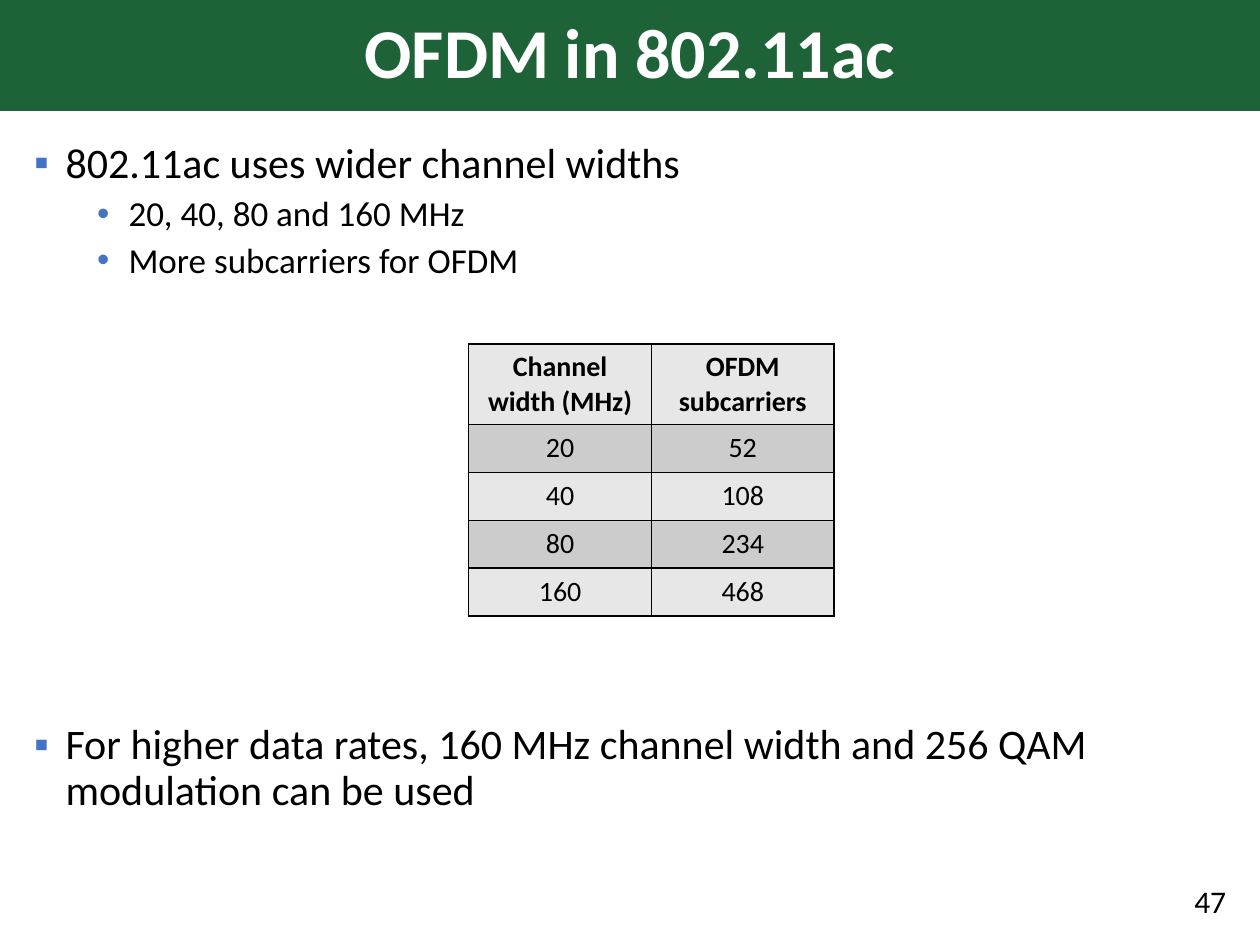
"""Build the slide on OFDM in 802.11ac."""
import lxml.etree
import pptx
import pptx.dml.color
import pptx.enum.text
import pptx.oxml.ns
import pptx.util

Inches = pptx.util.Inches
Pt = pptx.util.Pt
Color = pptx.dml.color.RGBColor
Align = pptx.enum.text.PP_ALIGN
Anchor = pptx.enum.text.MSO_ANCHOR
qn = pptx.oxml.ns.qn

GREEN = Color(0x1E, 0x62, 0x38)
BLUE = Color(0x44, 0x72, 0xC4)
BLACK = Color(0, 0, 0)
WHITE = Color(255, 255, 255)
LIGHT = Color(0xE7, 0xE7, 0xE7)
DARK = Color(0xCC, 0xCC, 0xCC)

BULLETS = [
    ("802.11ac uses wider channel widths", 0, 0),
    ("20, 40, 80 and 160 MHz", 1, 5),
    ("More subcarriers for OFDM", 1, 5),
    ("For higher data rates, 160 MHz channel width and 256 QAM "
     "modulation can be used", 0, 253),
]
LEVELS = [("▪", 0.25, 24), ("•", 0.75, 20)]
SUBCARRIERS = [
    ("Channel width (MHz)", "OFDM subcarriers"),
    ("20", "52"),
    ("40", "108"),
    ("80", "234"),
    ("160", "468"),
]


class SlideBuilder:
    """Hold the text style and the current slide."""

    def __init__(self, deck):
        """Add a title and content page to the deck."""
        self.page = deck.slides.add_slide(deck.slide_layouts[1])
        self.style = {"name": "Calibri", "bold": False}

    def apply(self, target, values):
        """Set each attribute named in the format values."""
        for name, value in values.items():
            setattr(target, name, value)

    def place(self, shape, left, top, width, height):
        """Move and size a shape, in inches."""
        edges = {"left": left, "top": top, "width": width, "height": height}
        self.apply(shape, {name: Inches(edge) for name, edge in edges.items()})

    def add_span(self, para, text, size, color=BLACK, **values):
        """Add one styled span to a paragraph."""
        span = para.add_run()
        span.text = text
        self.apply(span.font, {**self.style, "size": Pt(size), **values})
        span.font.color.rgb = color

    def title(self, text):
        """Fill the title band."""
        box = self.page.shapes.title
        self.place(box, 0, 0, 10, 0.88)
        box.fill.solid()
        box.fill.fore_color.rgb = GREEN
        self.apply(box.text_frame, {
            "vertical_anchor": Anchor.MIDDLE,
            "auto_size": pptx.enum.text.MSO_AUTO_SIZE.NONE})
        para = box.text_frame.paragraphs[0]
        self.apply(para, {"alignment": Align.CENTER, "line_spacing": 0.9})
        self.add_span(para, text, 40, WHITE, bold=True)

    def bullet(self, para, mark, indent):
        """Give a paragraph a coloured bullet and a hanging indent."""
        properties = para._p.get_or_add_pPr()
        properties.set("marL", str(Inches(indent)))
        properties.set("indent", str(Inches(-0.25)))
        color = lxml.etree.SubElement(properties, qn("a:buClr"))
        lxml.etree.SubElement(color, qn("a:srgbClr"), val=str(BLUE))
        lxml.etree.SubElement(properties, qn("a:buFont"), typeface="Arial")
        lxml.etree.SubElement(properties, qn("a:buChar"), char=mark)

    def body(self, items):
        """Fill the bulleted list."""
        box = self.page.placeholders[1]
        self.place(box, 0.17, 1.08, 9.65, 6.27)
        frame = box.text_frame
        frame.auto_size = pptx.enum.text.MSO_AUTO_SIZE.NONE
        for index, (text, level, space) in enumerate(items):
            para = frame.add_paragraph() if index else frame.paragraphs[0]
            mark, indent, size = LEVELS[level]
            self.bullet(para, mark, indent)
            self.apply(para, {"level": level, "line_spacing": 0.9,
                              "space_before": Pt(space)})
            self.add_span(para, text, size)

    def number(self, text):
        """Add the page number."""
        box = self.page.shapes.add_textbox(
            Inches(7.58), Inches(6.95), Inches(2.25), Inches(0.4))
        self.apply(box.text_frame, {"word_wrap": True,
                                    "vertical_anchor": Anchor.MIDDLE})
        para = box.text_frame.paragraphs[0]
        para.alignment = Align.RIGHT
        self.add_span(para, text, 18)

    def border(self, cell):
        """Draw a thin black line on all four sides of a cell."""
        properties = cell._tc.get_or_add_tcPr()
        for index, side in enumerate(("a:lnL", "a:lnR", "a:lnT", "a:lnB")):
            line = lxml.etree.Element(qn(side), w=str(Pt(1)))
            fill = lxml.etree.SubElement(line, qn("a:solidFill"))
            lxml.etree.SubElement(fill, qn("a:srgbClr"), val=str(BLACK))
            properties.insert(index, line)

    def table(self, rows):
        """Add the table with a bold header and alternating fills."""
        grid = self.page.shapes.add_table(
            len(rows), len(rows[0]), Inches(3.72), Inches(2.73),
            Inches(2.9), Inches(2.16)).table
        for column in grid.columns:
            column.width = Inches(1.45)
        for row, texts in enumerate(rows):
            grid.rows[row].height = Inches(0.38 if row else 0.64)
            for column, text in enumerate(texts):
                cell = grid.cell(row, column)
                cell.fill.solid()
                cell.fill.fore_color.rgb = DARK if row % 2 else LIGHT
                self.border(cell)
                para = cell.text_frame.paragraphs[0]
                para.alignment = Align.CENTER
                self.add_span(para, text, 16, bold=row == 0)


def main():
    """Build and save the deck."""
    deck = pptx.Presentation()
    deck.slide_width, deck.slide_height = Inches(10), Inches(7.5)
    builder = SlideBuilder(deck)
    builder.title("OFDM in 802.11ac")
    builder.body(BULLETS)
    builder.number("47")
    builder.table(SUBCARRIERS)
    deck.save("out.pptx")


if __name__ == "__main__":
    main()
